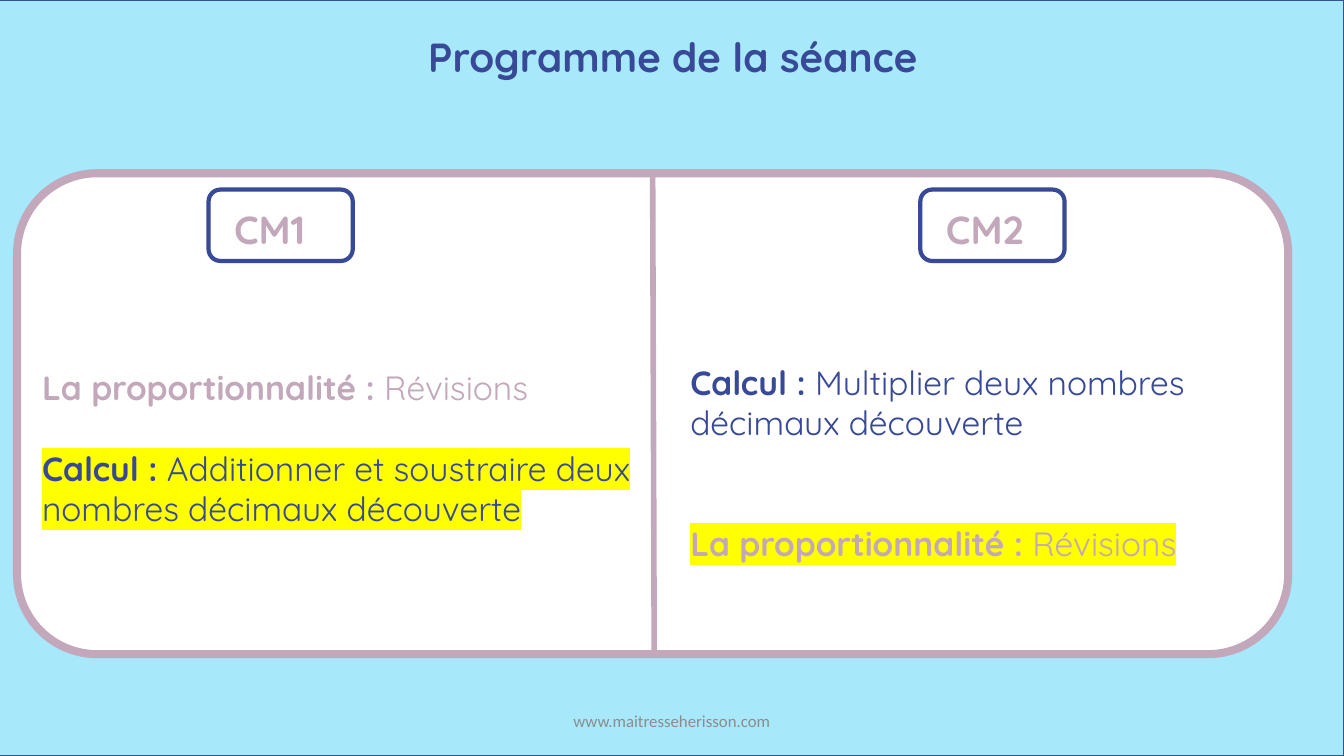
from dataclasses import dataclass

from lxml import etree
from pptx import Presentation
from pptx.dml.color import RGBColor
from pptx.enum.shapes import MSO_CONNECTOR, MSO_SHAPE
from pptx.enum.text import MSO_ANCHOR, PP_ALIGN
from pptx.oxml.ns import qn
from pptx.util import Pt


@dataclass(frozen=True)
class Theme:
    sky: str = "A7E8FB"
    frame: str = "325491"
    navy: str = "374997"
    mauve: str = "C3A7BA"
    white: str = "FFFFFF"
    grey: str = "8C8C8C"
    marker: str = "FFFF00"
    font: str = "Quicksand"
    footer_font: str = "Calibri"
    title_size: int = 29
    level_size: int = 28
    body_size: int = 24
    footer_size: int = 12


THEME = Theme()

# Content: each topic is (heading, detail, colour, highlighted)
TITLE = "Programme de la séance"
FOOTER = "www.maitresseherisson.com"
COLUMNS = [
    {
        "level": "CM1",
        "badge_left": 149,
        "topics_box": (23, 258.5, 435, 181),
        "gap": 29,
        "topics": [
            ("La proportionnalité : ", "Révisions", THEME.mauve, False),
            ("Calcul : ", "Additionner et soustraire deux nombres décimaux découverte",
             THEME.navy, True),
        ],
    },
    {
        "level": "CM2",
        "badge_left": 657.4,
        "topics_box": (486, 255, 413, 153),
        "gap": 57.5,
        "topics": [
            ("Calcul : ", "Multiplier deux nombres décimaux découverte", THEME.navy, False),
            ("La proportionnalité : ", "Révisions", THEME.mauve, True),
        ],
    },
]

# Layout, in points
WIDTH, HEIGHT = 960, 540
PANEL = (12.2, 123.8, 908, 343.5)
DIVIDER_FOOT = 467.3
BADGE_TOP, BADGE_WIDTH, BADGE_HEIGHT = 135.4, 103, 51
LEVEL_INSET_X, LEVEL_INSET_Y = 11.2, 8


def points(*lengths):
    return [Pt(length) for length in lengths]


def add_panel(shapes, kind, box, fill, line, weight):
    panel = shapes.add_shape(kind, *points(*box))
    panel.shadow.inherit = False
    panel.fill.solid()
    panel.fill.fore_color.rgb = RGBColor.from_string(fill)
    panel.line.color.rgb = RGBColor.from_string(line)
    panel.line.width = Pt(weight)
    return panel


def style(paragraph, size, color, font=THEME.font, bold=None):
    paragraph.font.name = font
    paragraph.font.size = Pt(size)
    paragraph.font.bold = bold
    paragraph.font.color.rgb = RGBColor.from_string(color)


def add_text(shapes, box):
    frame = shapes.add_textbox(*points(*box)).text_frame
    frame.word_wrap = True
    return frame


def highlight(run):
    marker = etree.SubElement(run.font._element, qn("a:highlight"))
    etree.SubElement(marker, qn("a:srgbClr"), val=THEME.marker)


def add_badge(shapes, level, left):
    badge = shapes.add_group_shape().shapes
    add_panel(badge, MSO_SHAPE.ROUNDED_RECTANGLE,
              (left, BADGE_TOP, BADGE_WIDTH, BADGE_HEIGHT), THEME.white, THEME.navy, 3)
    frame = add_text(badge, (left + LEVEL_INSET_X, BADGE_TOP + LEVEL_INSET_Y, 79, 41))
    frame.text = level
    style(frame.paragraphs[0], THEME.level_size, THEME.mauve, bold=True)


def add_topics(shapes, topics, box, gap):
    frame = add_text(shapes, box)
    for index, (heading, detail, color, marked) in enumerate(topics):
        topic = frame.add_paragraph() if index else frame.paragraphs[0]
        if index:
            topic.space_before = Pt(gap)
        style(topic, THEME.body_size, color)
        for wording, bold in ((heading, True), (detail, False)):
            run = topic.add_run()
            run.text = wording
            run.font.bold = bold
            if marked:
                highlight(run)


def add_divider(shapes, panel):
    divider = shapes.add_connector(
        MSO_CONNECTOR.STRAIGHT, *points(466, PANEL[1], DIVIDER_FOOT, PANEL[1] + PANEL[3]))
    divider.begin_connect(panel, 0)
    divider.line.color.rgb = RGBColor.from_string(THEME.mauve)
    divider.line.width = Pt(4)
    etree.SubElement(divider.element.spPr, qn("a:effectLst"))


def place_title(title, backdrop):
    """Format the title and bring it in front of the backdrop."""
    title.left, title.top, title.width, title.height = points(0.7, 19.4, WIDTH, 42.5)
    title.text_frame.text = TITLE
    title.text_frame.vertical_anchor = MSO_ANCHOR.TOP
    heading = title.text_frame.paragraphs[0]
    heading.alignment = PP_ALIGN.CENTER
    style(heading, THEME.title_size, THEME.navy, bold=True)
    backdrop.element.addnext(title.element)


def add_footer(shapes):
    frame = add_text(shapes, (318, 500.4, 324, 28.8))
    frame.vertical_anchor = MSO_ANCHOR.MIDDLE
    frame.text = FOOTER
    address = frame.paragraphs[0]
    address.alignment = PP_ALIGN.CENTER
    style(address, THEME.footer_size, THEME.grey, THEME.footer_font)


def main():
    deck = Presentation()
    deck.slide_width, deck.slide_height = points(WIDTH, HEIGHT)
    shapes = deck.slides.add_slide(deck.slide_layouts[5]).shapes

    backdrop = add_panel(shapes, MSO_SHAPE.RECTANGLE, (-0.5, 0, WIDTH, HEIGHT),
                         THEME.sky, THEME.frame, 1)
    place_title(shapes.title, backdrop)
    panel = add_panel(shapes, MSO_SHAPE.ROUNDED_RECTANGLE, PANEL,
                      THEME.white, THEME.mauve, 5.75)
    add_divider(shapes, panel)
    for column in COLUMNS:
        add_badge(shapes, column["level"], column["badge_left"])
        add_topics(shapes, column["topics"], column["topics_box"], column["gap"])
    add_footer(shapes)

    deck.save("out.pptx")


if __name__ == "__main__":
    main()
